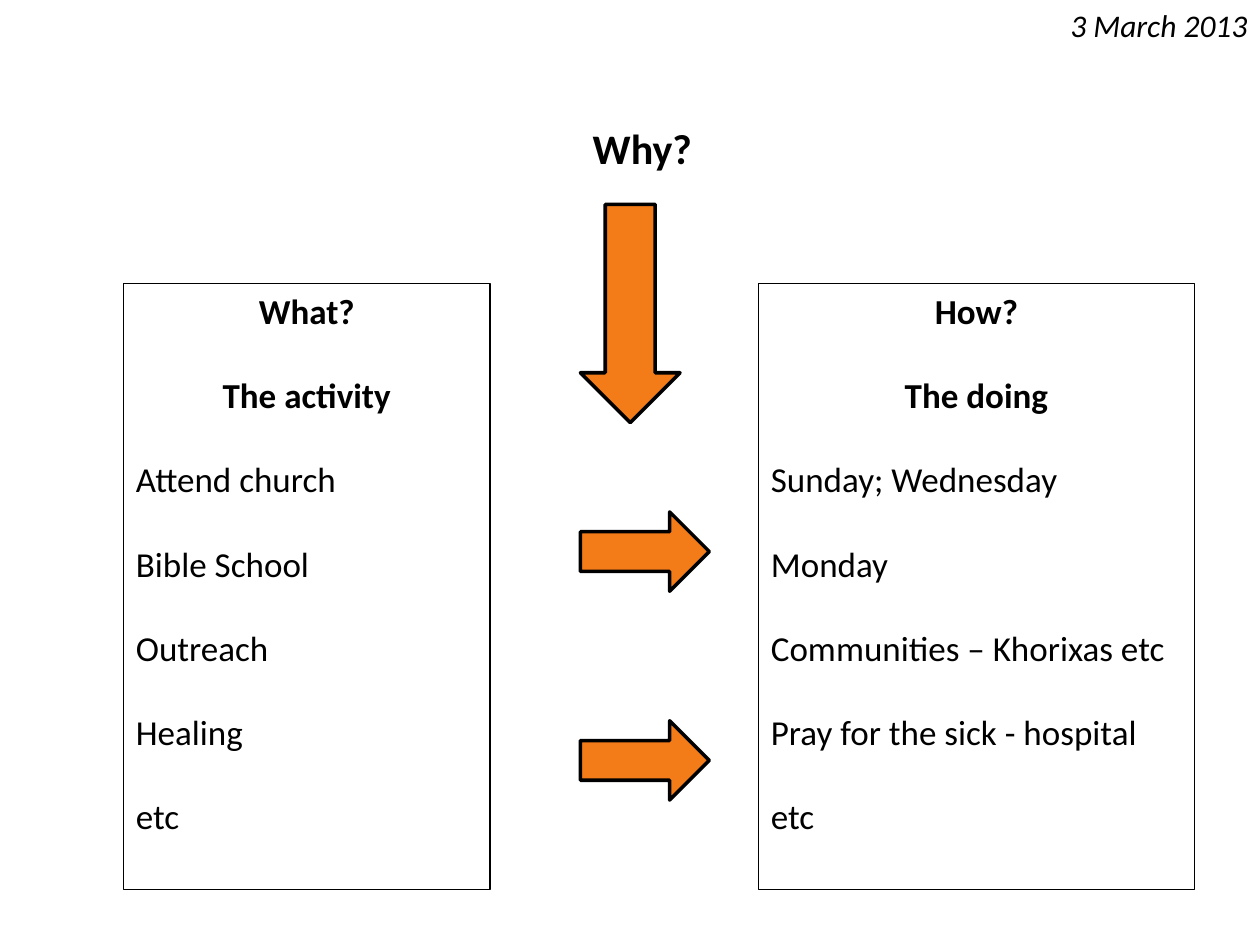
from pptx import Presentation
from pptx.dml.color import RGBColor
from pptx.enum.shapes import MSO_SHAPE as Shape
from pptx.enum.text import MSO_ANCHOR as Anchor, PP_ALIGN as Align
from pptx.util import Cm, Pt

BLACK, ORANGE = "000000", "F37C19"


def color(code):
    return RGBColor.from_string(code)


class Sketch:
    font = "Calibri"

    def __init__(self, page):
        self.page = page

    def fill_para(self, para, text, size, align=Align.LEFT, bold=False, italic=False):
        para.text = text
        para.alignment = align
        para.font.name = self.font
        para.font.size = Pt(size)
        para.font.bold = bold
        para.font.italic = italic
        para.font.color.rgb = color(BLACK)

    def label(self, area, text, size, **style):
        box = self.page.shapes.add_textbox(*map(Cm, area))
        box.text_frame.word_wrap = True
        self.fill_para(box.text_frame.paragraphs[0], text, size, **style)

    def shape(self, kind, area, line_width, fill=None):
        shape = self.page.shapes.add_shape(kind, *map(Cm, area))
        shape.shadow.inherit = False
        if fill:
            shape.fill.solid()
            shape.fill.fore_color.rgb = color(fill)
        else:
            shape.fill.background()
        shape.line.color.rgb = color(BLACK)
        shape.line.width = Pt(line_width)
        return shape

    def arrow(self, kind, area):
        self.shape(kind, area, 2, ORANGE)

    def panel(self, area, headings, entries):
        frame = self.shape(Shape.RECTANGLE, area, 0.75).text_frame
        frame.word_wrap = True
        frame.vertical_anchor = Anchor.TOP
        for index, text in enumerate(headings + entries):
            para = frame.add_paragraph() if index else frame.paragraphs[0]
            heading = index < len(headings)
            self.fill_para(para, text, 20, Align.CENTER if heading else Align.LEFT, bold=heading)
            if index:
                para.space_before = Pt(24)


def main():
    deck = Presentation()
    deck.slide_width, deck.slide_height = Cm(25.4), Cm(19.05)
    sketch = Sketch(deck.slides.add_slide(deck.slide_layouts[6]))

    # Date
    sketch.label((19.51, 0, 5.89, 1.02), "3 March 2013", 18, align=Align.RIGHT, italic=True)

    # What and How panels
    panel_top, panel_height = 5.72, 12.22
    sketch.panel((2.49, panel_top, 7.39, panel_height), ["What?", "The activity"],
                 ["Attend church", "Bible School", "Outreach", "Healing", "etc"])
    sketch.panel((15.29, panel_top, 8.79, panel_height), ["How?", "The doing"],
                 ["Sunday; Wednesday", "Monday", "Communities – Khorixas etc",
                  "Pray for the sick - hospital", "etc"])

    # Why, leading down and then across
    arrow_left = 11.7
    sketch.label((arrow_left, 2.34, 2.79, 1.27), "Why?", 24, bold=True)
    sketch.arrow(Shape.DOWN_ARROW, (arrow_left, 4.12, 2.01, 4.4))
    for top in (10.32, 14.53):
        sketch.arrow(Shape.RIGHT_ARROW, (arrow_left, top, 2.6, 1.6))

    deck.save("out.pptx")


if __name__ == "__main__":
    main()
